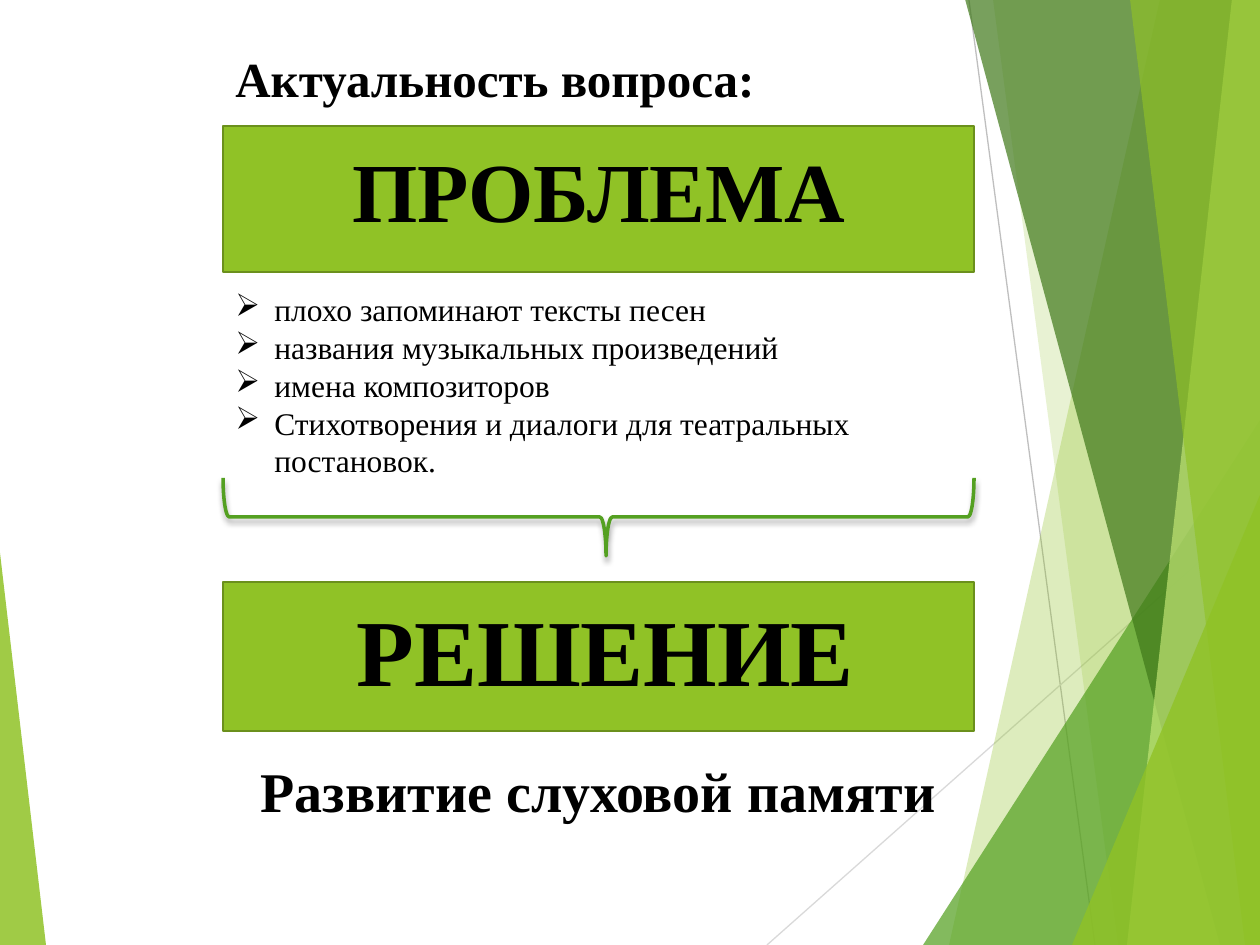
from lxml import etree
from pptx import Presentation
from pptx.dml.color import RGBColor
from pptx.enum.shapes import MSO_CONNECTOR, MSO_SHAPE
from pptx.enum.text import PP_ALIGN
from pptx.oxml import parse_xml
from pptx.oxml.ns import nsdecls, qn
from pptx.util import Pt

SCALE = 914400 / 126
WIDTH, HEIGHT = 1260, 945
LEFT, COLUMN = 223, 751
RECT, TRIANGLE, BRACE = MSO_SHAPE.RECTANGLE, MSO_SHAPE.ISOSCELES_TRIANGLE, MSO_SHAPE.RIGHT_BRACE
STRAIGHT = MSO_CONNECTOR.STRAIGHT
ALIGN_LEFT, CENTER = PP_ALIGN.LEFT, PP_ALIGN.CENTER
FONT = "Times New Roman"
LIME, GREEN = "90C226", "54A021"
BULLETS = [
    "плохо запоминают тексты песен",
    "названия музыкальных произведений",
    "имена композиторов",
    "Стихотворения и диалоги для театральных постановок.",
]


def px(n):
    return round(n * SCALE)


def rgb(color):
    return RGBColor.from_string(color)


def paint(sp, color, opacity=100):
    """Give a shape a plain fill without outline or shadow."""
    sp.shadow.inherit = False
    sp.fill.solid()
    sp.fill.fore_color.rgb = rgb(color)
    sp.line.fill.background()
    if opacity < 100:
        clr = sp.fill._xPr.find(qn("a:solidFill"))[0]
        etree.SubElement(clr, qn("a:alpha")).set("val", str(opacity * 1000))


def add_preset(s, kind, x, y, w, h):
    return s.shapes.add_shape(kind, px(x), px(y), px(w), px(h))


def add_line(s, x1, y1, x2, y2, color):
    line = s.shapes.add_connector(STRAIGHT, px(x1), px(y1), px(x2), px(y2))
    line.line.color.rgb = rgb(color)
    line.line.width = Pt(0.75)
    etree.SubElement(line._element.spPr, qn("a:effectLst"))


def add_band(s, top_x, bottom_x, color, opacity):
    """Slanted band reaching the right edge of the slide."""
    builder = s.shapes.build_freeform(top_x, -1, scale=SCALE)
    builder.add_line_segments([(WIDTH, -1), (WIDTH, HEIGHT), (bottom_x, HEIGHT)])
    paint(builder.convert_to_shape(), color, opacity)


def add_triangle(s, x, y, w, apex, color, opacity):
    """Triangle standing on the bottom edge of the slide."""
    sp = add_preset(s, TRIANGLE, x, y, w, HEIGHT - y)
    sp.adjustments[0] = apex
    paint(sp, color, opacity)


def add_panel(s, y, h):
    sp = add_preset(s, RECT, LEFT, y, COLUMN, h)
    paint(sp, LIME)
    sp.line.color.rgb = rgb("6B901C")
    sp.line.width = Pt(1.5)


def add_text(s, x, y, w, h, lines, size, bold=True, align=ALIGN_LEFT):
    tf = s.shapes.add_textbox(px(x), px(y), px(w), px(h)).text_frame
    tf.word_wrap = True
    tf.text = "\n".join(lines)
    for p in tf.paragraphs:
        p.alignment = align
        p.font.name = FONT
        p.font.size = Pt(size)
        p.font.bold = bold
        p.font.color.rgb = rgb("000000")
    return tf


def add_bullets(tf, char, indent):
    for p in tf.paragraphs:
        pPr = p._p.get_or_add_pPr()
        pPr.set("marL", str(px(indent)))
        pPr.set("indent", str(-px(indent)))
        pPr.insert_element_before(
            parse_xml(f'<a:buChar {nsdecls("a")} char="{char}"/>'), "a:tabLst", "a:defRPr")


def add_brace(s, x, y, w, h):
    """Brace pointing down: a right brace turned by 90 degrees within the given box."""
    sp = add_preset(s, BRACE, x + (w - h) / 2, y + (h - w) / 2, h, w)
    sp.rotation = 90
    sp.adjustments[0] = 0.08
    sp.adjustments[1] = 0.49
    sp.fill.background()
    sp.line.color.rgb = rgb(GREEN)
    sp.line.width = Pt(2)
    sp.shadow.inherit = False
    sp._element.spPr.find(qn("a:effectLst")).append(parse_xml(
        f'<a:outerShdw {nsdecls("a")} blurRad="{Pt(3)}" dist="{Pt(2)}" dir="5400000" '
        'rotWithShape="0"><a:srgbClr val="000000"><a:alpha val="35000"/></a:srgbClr>'
        '</a:outerShdw>'))


def add_background(s):
    add_line(s, 969, 0, 1095, HEIGHT, "BFBFBF")
    add_line(s, WIDTH, 508, 767, HEIGHT, "D9D9D9")
    add_band(s, 1160, 949, LIME, 30)
    add_band(s, 993, 1118, LIME, 20)
    add_triangle(s, 923, 420, 337, 1, GREEN, 72)
    add_band(s, 965, 1220, "3F7819", 70)
    add_band(s, 1232, 1127, "C0E474", 70)
    add_band(s, 1130, 1245, LIME, 65)
    add_triangle(s, 1072, 495, 188, 1, LIME, 80)
    add_triangle(s, 0, 553, 46, 0, LIME, 85)


def main():
    prs = Presentation()
    prs.slide_width, prs.slide_height = px(WIDTH), px(HEIGHT)
    s = prs.slides.add_slide(prs.slide_layouts[6])
    add_background(s)
    add_text(s, LEFT, 42, COLUMN, 101, ["Актуальность вопроса:"], 28)
    add_panel(s, 126, 146)
    add_text(s, 237, 132, 724, 115, ["ПРОБЛЕМА"], 48, align=CENTER)
    tf = add_text(s, LEFT, 284, COLUMN, 204, BULLETS, 18, bold=False)
    add_bullets(tf, "➢", 39)
    add_brace(s, LEFT, 478, COLUMN, 78)
    add_panel(s, 582, 149)
    add_text(s, 344, 586, 536, 127, ["РЕШЕНИЕ"], 54)
    add_text(s, LEFT, 750, COLUMN, 81, ["Развитие слуховой памяти"], 32, align=CENTER)
    prs.save("out.pptx")


if __name__ == "__main__":
    main()
